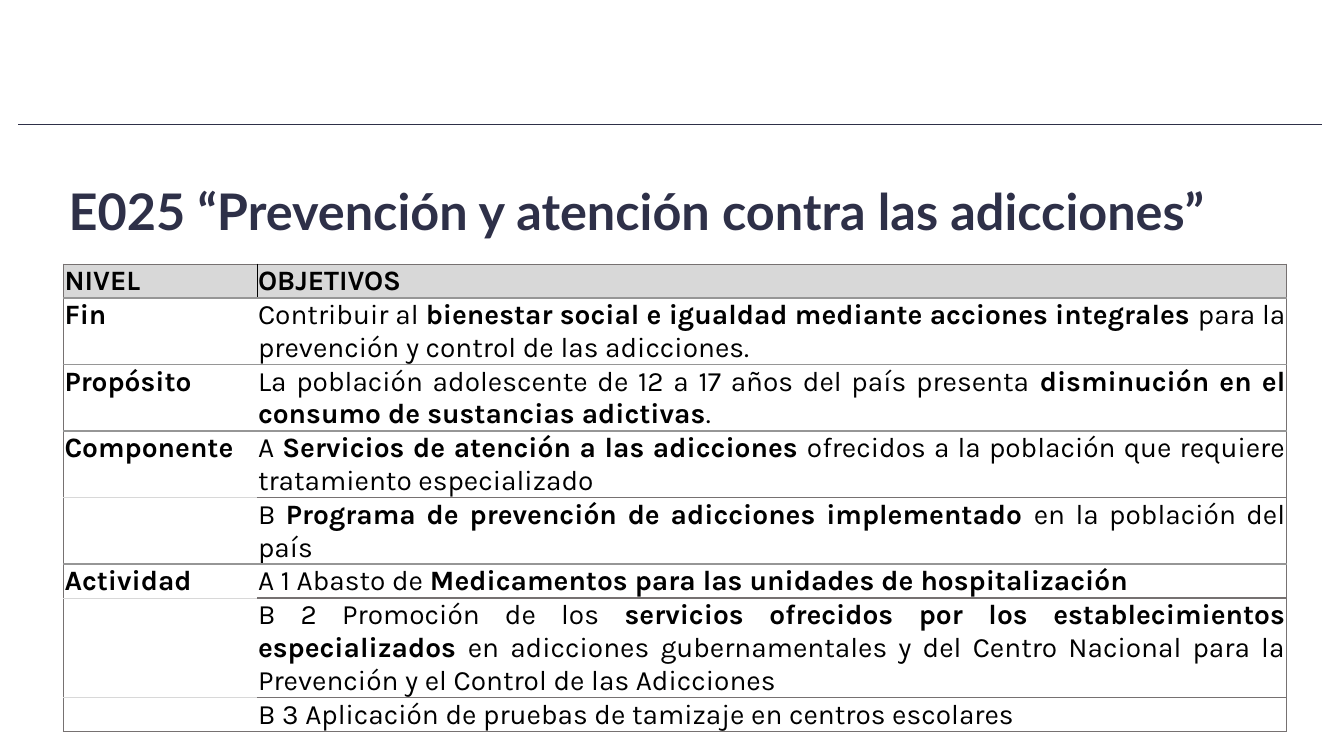
import pptx
import pptx.dml.color
import pptx.enum.text
import pptx.oxml
import pptx.oxml.ns
import pptx.util

Inches = pptx.util.Inches
Pt = pptx.util.Pt
ALIGN = pptx.enum.text.PP_ALIGN
ANCHOR = pptx.enum.text.MSO_ANCHOR

COLOURS = {
    "navy": "2E3048",
    "text": "000000",
    "header": "D8D8D8",
    "frame": "767171",
    "divider": "969696",
}
FRAME = ("frame", 1)
DIVIDER = ("divider", 1.5)
FAINT = ("header", 0.5)
HEADER_SPLIT = ("text", 0.5)

# Level, objective (bold between asterisks), number of text lines
OBJECTIVES = [
    ("*NIVEL*", "*OBJETIVOS*", 1),
    ("*Fin*", "Contribuir al *bienestar social e igualdad mediante acciones integrales *"
     "para la prevención y control de las adicciones.", 2),
    ("*Propósito*", "La población adolescente de 12 a 17 años del país presenta "
     "*disminución en el consumo de sustancias adictivas*.", 2),
    ("*Componente*", "A *Servicios de atención a las adicciones *"
     "ofrecidos a la población que requiere tratamiento especializado", 2),
    ("", "B *Programa de prevención de adicciones implementado *en la población del país", 2),
    ("*Actividad*", "A 1 Abasto de *Medicamentos para las unidades de hospitalización*", 1),
    ("", "B 2 Promoción de los *servicios ofrecidos por los establecimientos especializados *"
     "en adicciones gubernamentales y del Centro Nacional para la Prevención y el Control "
     "de las Adicciones", 3),
    ("", "B 3 Aplicación de pruebas de tamizaje en centros escolares", 1),
]


class SlideBuilder:
    line_height = 0.328
    title_format = {"name": "Lato", "size": Pt(36), "bold": True}
    cell_format = {"name": "Karla", "size": Pt(20)}
    cell_margins = {"margin_left": Inches(0.01), "margin_right": Inches(0.01),
                    "margin_top": Inches(0.01), "margin_bottom": 0}

    def __init__(self, presentation):
        self.slide = presentation.slides.add_slide(presentation.slide_layouts[5])

    def colour(self, name):
        return pptx.dml.color.RGBColor.from_string(COLOURS[name])

    def apply(self, target, values):
        for name, value in values.items():
            setattr(target, name, value)

    def rule(self, left, top, right):
        connector = self.slide.shapes.add_connector(
            pptx.enum.shapes.MSO_CONNECTOR.STRAIGHT,
            Inches(left), Inches(top), Inches(right), Inches(top))
        connector.line.color.rgb = self.colour("navy")
        connector.line.width = Pt(0.5)
        properties = connector._element.spPr
        properties.append(pptx.oxml.parse_xml(
            f"<a:effectLst {pptx.oxml.ns.nsdecls('a')}/>"))

    def title(self, text, left, top, width, height):
        shape = self.slide.shapes.title
        self.apply(shape, {"left": Inches(left), "top": Inches(top),
                           "width": Inches(width), "height": Inches(height)})
        self.apply(shape.text_frame, {"text": text, "word_wrap": True,
                                      "vertical_anchor": ANCHOR.MIDDLE})
        paragraph = shape.text_frame.paragraphs[0]
        self.apply(paragraph, {"alignment": ALIGN.LEFT, "line_spacing": 0.9})
        font = paragraph.runs[0].font
        self.apply(font, self.title_format)
        font.color.rgb = self.colour("navy")

    def borders(self, cell, left, right, top, bottom):
        properties = cell._tc.get_or_add_tcPr()
        sides = {"lnL": left, "lnR": right, "lnT": top, "lnB": bottom}
        for position, (tag, border) in enumerate(sides.items()):
            name, width = border or (None, 0)
            paint = (f'<a:solidFill><a:srgbClr val="{COLOURS[name]}"/></a:solidFill>'
                     if border else "<a:noFill/>")
            properties.insert(position, pptx.oxml.parse_xml(
                f'<a:{tag} {pptx.oxml.ns.nsdecls("a")} w="{Pt(width)}">{paint}</a:{tag}>'))

    def cell(self, cell, text, header, justified):
        self.apply(cell, self.cell_margins)
        cell.vertical_anchor = ANCHOR.MIDDLE if header else ANCHOR.TOP
        if header:
            cell.fill.solid()
            cell.fill.fore_color.rgb = self.colour("header")
        else:
            cell.fill.background()
        paragraph = cell.text_frame.paragraphs[0]
        paragraph.alignment = ALIGN.JUSTIFY if justified else ALIGN.LEFT
        for index, part in enumerate(text.split("*")):
            if part:
                run = paragraph.add_run()
                run.text = part
                self.apply(run.font, {**self.cell_format, "bold": index % 2 == 1})
                run.font.color.rgb = self.colour("text")

    def table(self, rows, left, top, column_widths):
        height = self.line_height * sum(lines for _, _, lines in rows)
        table = self.slide.shapes.add_table(
            len(rows), len(column_widths), Inches(left), Inches(top),
            Inches(sum(column_widths)), Inches(height)).table
        self.apply(table, {"first_row": False, "horz_banding": False})
        for column, width in zip(table.columns, column_widths):
            column.width = Inches(width)

        # Rows without a level continue the group above with a lighter line
        edges = [[FRAME, FRAME]]
        for level, _, _ in rows[1:]:
            edges.append([DIVIDER, DIVIDER] if level else [FAINT, FRAME])
        edges.append([FRAME, FRAME])

        for index, (level, objective, lines) in enumerate(rows):
            table.rows[index].height = Inches(self.line_height * lines)
            header = index == 0
            middle = HEADER_SPLIT if header else None
            for side, text in enumerate((level, objective)):
                cell = table.cell(index, side)
                self.cell(cell, text, header, header or side == 1)
                self.borders(cell, middle if side else FRAME, FRAME if side else middle,
                             edges[index][side], edges[index + 1][side])


def main():
    presentation = pptx.Presentation()
    presentation.slide_width = Inches(13.33)
    presentation.slide_height = Inches(7.5)
    builder = SlideBuilder(presentation)

    # Top rule and title
    builder.rule(0.18, 1.23, 13.11)
    builder.title("E025 “Prevención y atención contra las adicciones”", 0.58, 1.56, 12.13, 1.13)

    # Objectives by level
    builder.table(OBJECTIVES, 0.63, 2.62, (1.92, 10.21))
    presentation.save("out.pptx")


if __name__ == "__main__":
    main()
